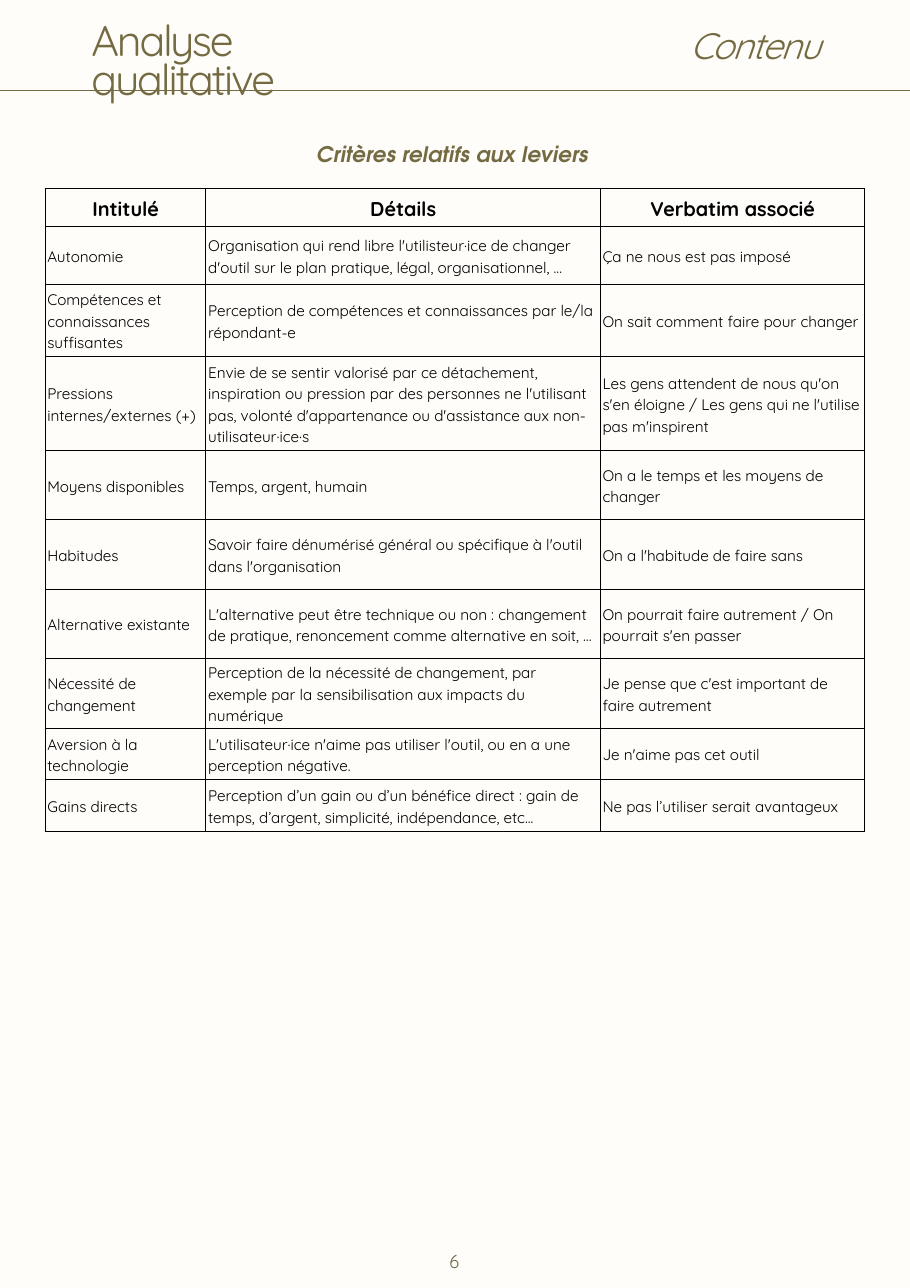
from pptx import Presentation
from pptx.dml.color import RGBColor
from pptx.enum.shapes import MSO_CONNECTOR
from pptx.enum.text import MSO_ANCHOR, MSO_AUTO_SIZE, PP_ALIGN as Align
from pptx.oxml import parse_xml
from pptx.oxml.ns import nsdecls, qn
from pptx.util import Inches, Pt

OLIVE, BLACK, CREAM = "746B43", "000000", "FFFDF9"
BODY_FONT, HEADING_FONT = "Quicksand", "TeX Gyre Adventor"


def color(value):
    return RGBColor.from_string(value)


def style_paragraph(paragraph, font_name, size, text_color, line_spacing, align,
                    bold=False, italic=False):
    paragraph.alignment = align
    paragraph.line_spacing = Pt(line_spacing)
    font = paragraph.font
    font.name, font.size = font_name, Pt(size)
    font.bold, font.italic = bold, italic
    font.color.rgb = color(text_color)


presentation = Presentation()
presentation.slide_width, presentation.slide_height = Inches(8.26), Inches(11.69)
slide = presentation.slides.add_slide(presentation.slide_layouts[6])
slide.background.fill.solid()
slide.background.fill.fore_color.rgb = color(CREAM)

# Header rule
header_rule = slide.shapes.add_connector(
    MSO_CONNECTOR.STRAIGHT, 0, Inches(0.82), presentation.slide_width, Inches(0.82))
header_rule.line.color.rgb = color(OLIVE)
header_rule.line.width = Pt(0.75)
header_rule._element.spPr.append(parse_xml(f"<a:effectLst {nsdecls('a')}/>"))

# Criteria table
column_widths = [1.46, 3.58, 2.4]
row_heights = [0.35, 0.52, 0.66, 0.85, 0.63, 0.63, 0.63, 0.63, 0.47, 0.47]
criteria = [
    ("Intitulé", "Détails", "Verbatim associé"),
    ("Autonomie",
     "Organisation qui rend libre l'utilisteur·ice de changer d'outil sur le plan "
     "pratique, légal, organisationnel, …",
     "Ça ne nous est pas imposé"),
    ("Compétences et connaissances suffisantes",
     "Perception de compétences et connaissances par le/la répondant-e",
     "On sait comment faire pour changer"),
    ("Pressions internes/externes (+)",
     "Envie de se sentir valorisé par ce détachement, inspiration ou pression par des "
     "personnes ne l'utilisant pas, volonté d'appartenance ou d'assistance aux "
     "non-utilisateur·ice·s",
     "Les gens attendent de nous qu'on s'en éloigne / Les gens qui ne l'utilise pas "
     "m'inspirent"),
    ("Moyens disponibles", "Temps, argent, humain",
     "On a le temps et les moyens de changer"),
    ("Habitudes",
     "Savoir faire dénumérisé général ou spécifique à l'outil dans l'organisation",
     "On a l'habitude de faire sans"),
    ("Alternative existante",
     "L'alternative peut être technique ou non : changement de pratique, renoncement "
     "comme alternative en soit, …",
     "On pourrait faire autrement / On pourrait s'en passer"),
    ("Nécessité de changement",
     "Perception de la nécessité de changement, par exemple par la sensibilisation aux "
     "impacts du numérique",
     "Je pense que c'est important de faire autrement"),
    ("Aversion à la technologie",
     "L'utilisateur·ice n'aime pas utiliser l'outil, ou en a une perception négative.",
     "Je n'aime pas cet outil"),
    ("Gains directs",
     "Perception d’un gain ou d’un bénéfice direct : gain de temps, d’argent, "
     "simplicité, indépendance, etc...",
     "Ne pas l’utiliser serait avantageux"),
]
table = slide.shapes.add_table(
    len(criteria), len(column_widths), Inches(0.41), Inches(1.71),
    Inches(sum(column_widths)), Inches(sum(row_heights))).table
table.first_row = table.horz_banding = False
for column, width in zip(table.columns, column_widths):
    column.width = Inches(width)
for row, height in zip(table.rows, row_heights):
    row.height = Inches(height)

for row_index, texts in enumerate(criteria):
    for column_index, text in enumerate(texts):
        cell = table.cell(row_index, column_index)
        cell.text = text
        cell.vertical_anchor = MSO_ANCHOR.MIDDLE
        cell.margin_left = cell.margin_right = Inches(0.02)
        cell.margin_top = cell.margin_bottom = Inches(0.02)
        paragraph = cell.text_frame.paragraphs[0]
        if row_index == 0:
            style_paragraph(paragraph, BODY_FONT, 13, BLACK, 18.2, Align.CENTER, bold=True)
        else:
            style_paragraph(paragraph, BODY_FONT, 10, BLACK, 14, Align.LEFT)
        cell.fill.background()
        properties = cell._tc.get_or_add_tcPr()
        for position, side in enumerate(("lnL", "lnR", "lnT", "lnB")):
            properties.insert(position, parse_xml(
                f'<a:{side} {nsdecls("a")} w="{Pt(0.75)}"><a:solidFill>'
                f'<a:srgbClr val="{BLACK}"/></a:solidFill></a:{side}>'))

# Headings and page number: text, box, font, size, line spacing, tracking, align, bold, italic
labels = [
    ("Contenu", (6.22, 0.3, 1.23, 0.33), BODY_FONT, 24, 21.8, -1.2, Align.RIGHT, False, True),
    ("Analyse qualitative", (0.83, 0.24, 2.97, 0.38), BODY_FONT, 28, 25.5, -1.4,
     Align.LEFT, False, False),
    ("Critères relatifs aux leviers ", (0.83, 1.28, 6.61, 0.23), HEADING_FONT, 14, 16.6, 0.1,
     Align.CENTER, True, True),
    ("6", (4.08, 11.31, 0.1, 0.21), BODY_FONT, 12, 16.8, 0.1, Align.JUSTIFY, False, False),
]
for text, box, font_name, size, line_spacing, tracking, align, bold, italic in labels:
    frame = slide.shapes.add_textbox(*map(Inches, box)).text_frame
    frame.word_wrap = True
    frame.auto_size = MSO_AUTO_SIZE.SHAPE_TO_FIT_TEXT
    frame.margin_left = frame.margin_right = frame.margin_top = frame.margin_bottom = 0
    paragraph = frame.paragraphs[0]
    run = paragraph.add_run()
    run.text = text
    style_paragraph(paragraph, font_name, size, OLIVE, line_spacing, align, bold, italic)
    run._r.get_or_add_rPr().set("spc", str(round(tracking * 100)))

presentation.save("out.pptx")
